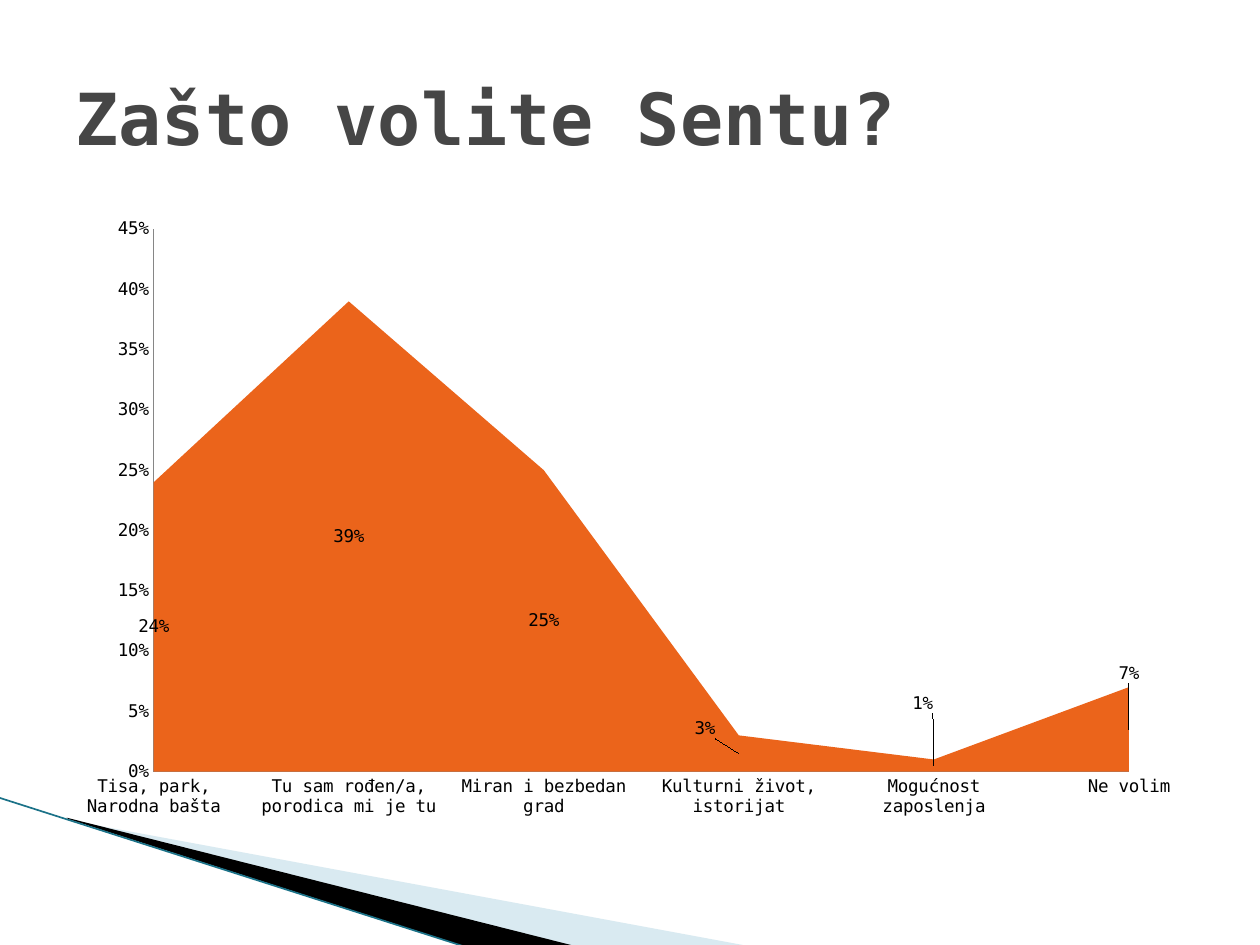
"""Build the slide with an area chart of reasons for loving Senta."""
import pptx
import pptx.chart.data
import pptx.dml.color
import pptx.enum.chart
import pptx.enum.shapes
import pptx.enum.text
import pptx.oxml
import pptx.oxml.ns
import pptx.util
from lxml import etree

Inches = pptx.util.Inches
Pt = pptx.util.Pt
qn = pptx.oxml.ns.qn
FACE = "DejaVu Sans Mono"


def paint(color, code):
    """Set a colour from a hex string."""
    color.rgb = pptx.dml.color.RGBColor.from_string(code)


def place(layout, **parts):
    """Fill a chart layout element with manual values."""
    manual = etree.SubElement(layout, qn("c:manualLayout"))
    for name, value in parts.items():
        etree.SubElement(manual, qn("c:" + name)).set("val", str(value))


deck = pptx.Presentation()
deck.slide_width, deck.slide_height = Inches(10), Inches(7.5)
slide = deck.slides.add_slide(deck.slide_layouts[5])
shapes = slide.shapes

wedges = [
    ("A0CBDC", 40, [(0.55, 6.51), (5.95, 7.51), (4.56, 7.51), (0.55, 6.5)]),
    ("000000", 100, [(0.53, 6.49), (4.57, 7.51), (3.72, 7.52), (0.54, 6.5)]),
]
for code, alpha, points in wedges:
    spots = [(Inches(x), Inches(y)) for x, y in points]
    pen = shapes.build_freeform(*spots[0])
    pen.add_line_segments(spots[1:], close=True)
    wedge = pen.convert_to_shape()
    wedge.shadow.inherit = False
    wedge.fill.solid()
    paint(wedge.fill.fore_color, code)
    wedge.line.fill.background()
    if alpha < 100:
        tint = wedge.fill._xPr.find(qn("a:solidFill"))[0]
        etree.SubElement(tint, qn("a:alpha")).set("val", str(alpha * 1000))

edge = shapes.add_connector(
    pptx.enum.shapes.MSO_CONNECTOR.STRAIGHT,
    Inches(-0.01), Inches(6.33), Inches(3.71), Inches(7.52))
edge.line.width = Pt(0.95)
paint(edge.line.color, "1B7288")
etree.SubElement(edge._element.spPr, qn("a:effectLst"))

title = shapes.title
title.left, title.top = Inches(0.5), Inches(0.3)
title.width, title.height = Inches(9), Inches(1.25)
frame = title.text_frame
frame.word_wrap = True
frame.vertical_anchor = pptx.enum.text.MSO_ANCHOR.MIDDLE
line = frame.paragraphs[0]
line.alignment = pptx.enum.text.PP_ALIGN.LEFT
run = line.add_run()
run.text = "Zašto volite Sentu?"
run.font.name, run.font.size, run.font.bold = FACE, Pt(41), True
paint(run.font.color, "464646")

data = pptx.chart.data.CategoryChartData(number_format="0%")
data.categories = [
    "Tisa, park, Narodna bašta",
    "Tu sam rođen/a, porodica mi je tu",
    "Miran i bezbedan grad",
    "Kulturni život, istorijat",
    "Mogućnost zaposlenja",
    "Ne volim",
]
data.add_series("Series 1", [0.24, 0.39, 0.25, 0.03, 0.01, 0.07])
chart = shapes.add_chart(
    pptx.enum.chart.XL_CHART_TYPE.AREA,
    Inches(0.5), Inches(1.62), Inches(9), Inches(4.95), data).chart
chart.has_title = chart.has_legend = False
chart.font.name, chart.font.size = FACE, Pt(10)
paint(chart.font.color, "000000")

for axis in (chart.category_axis, chart.value_axis):
    axis.has_major_gridlines = False
    axis.major_tick_mark = pptx.enum.chart.XL_TICK_MARK.NONE
    axis.minor_tick_mark = pptx.enum.chart.XL_TICK_MARK.NONE
    axis.format.line.width = Pt(0.75)
    paint(axis.format.line.color, "868686")
scale = chart.value_axis
scale.minimum_scale, scale.maximum_scale, scale.major_unit = 0, 0.45, 0.05
scale.tick_labels.number_format = "0%"
scale.tick_labels.number_format_is_linked = False
scale._element.find(qn("c:crossBetween")).set("val", "midCat")

area = chart._chartSpace.find(".//" + qn("c:plotArea"))
layout = area.find(qn("c:layout"))
if layout is None:
    layout = etree.Element(qn("c:layout"))
    area.insert(0, layout)
place(layout, layoutTarget="inner", xMode="edge", yMode="edge",
      x=0.08, y=0.04, w=0.86, h=0.87)

plot = chart.plots[0]
plot.vary_by_categories = False
series = plot.series[0]
series.format.fill.solid()
paint(series.format.fill.fore_color, "EB641B")
labels = series.data_labels
labels.show_value = True
labels.number_format, labels.number_format_is_linked = "0%", False

shifts = {3: (-0.03, -0.04), 4: (-0.01, -0.1), 5: (0, -0.09)}
for index, (x, y) in shifts.items():
    font = series.points[index].data_label.font
    font.name, font.size = FACE, Pt(10)
    paint(font.color, "000000")
for label in series._element.iter(qn("c:dLbl")):
    mark = label.find(qn("c:idx"))
    x, y = shifts[int(mark.get("val"))]
    layout = etree.Element(qn("c:layout"))
    mark.addnext(layout)
    place(layout, x=x, y=y)

deck.save("out.pptx")
